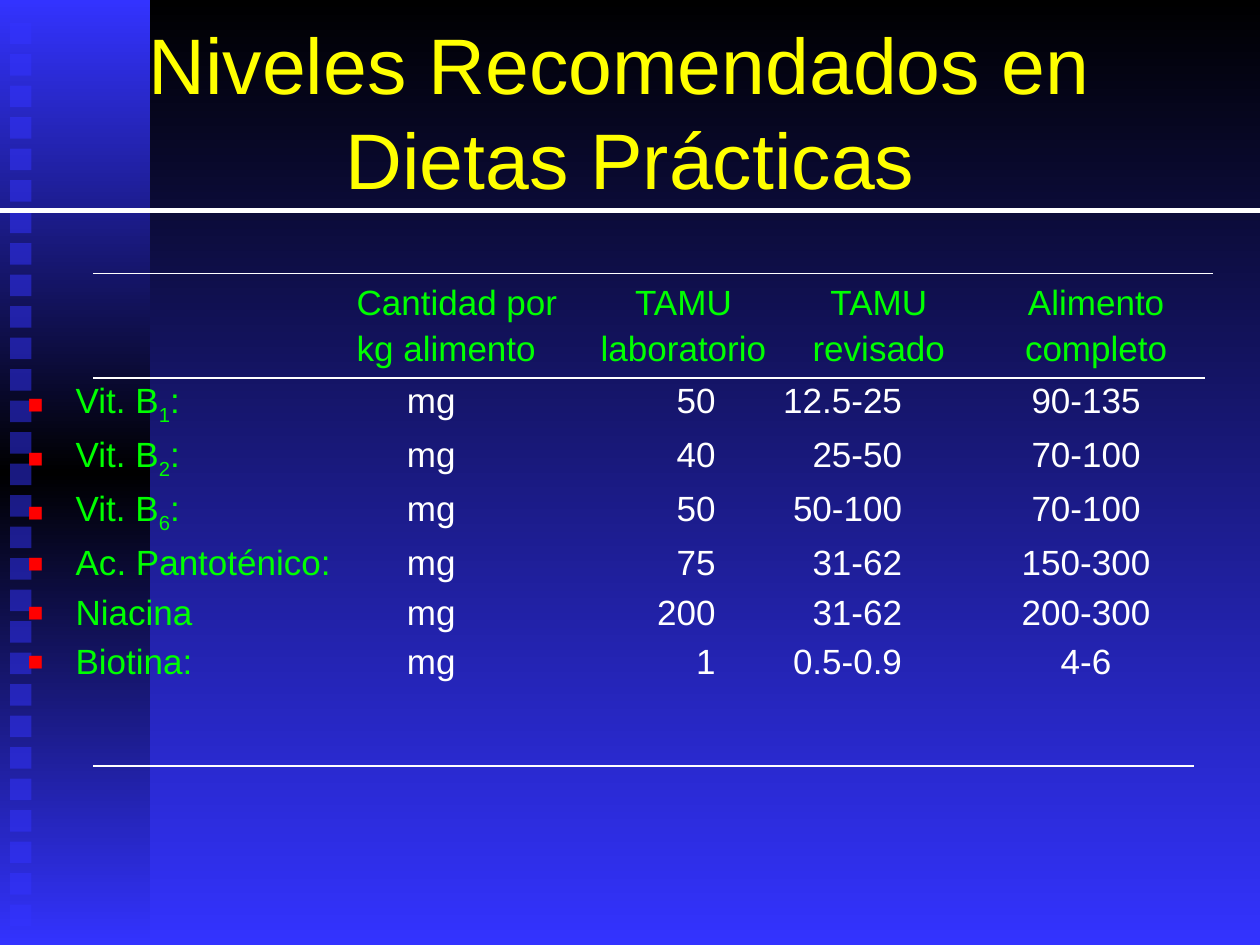
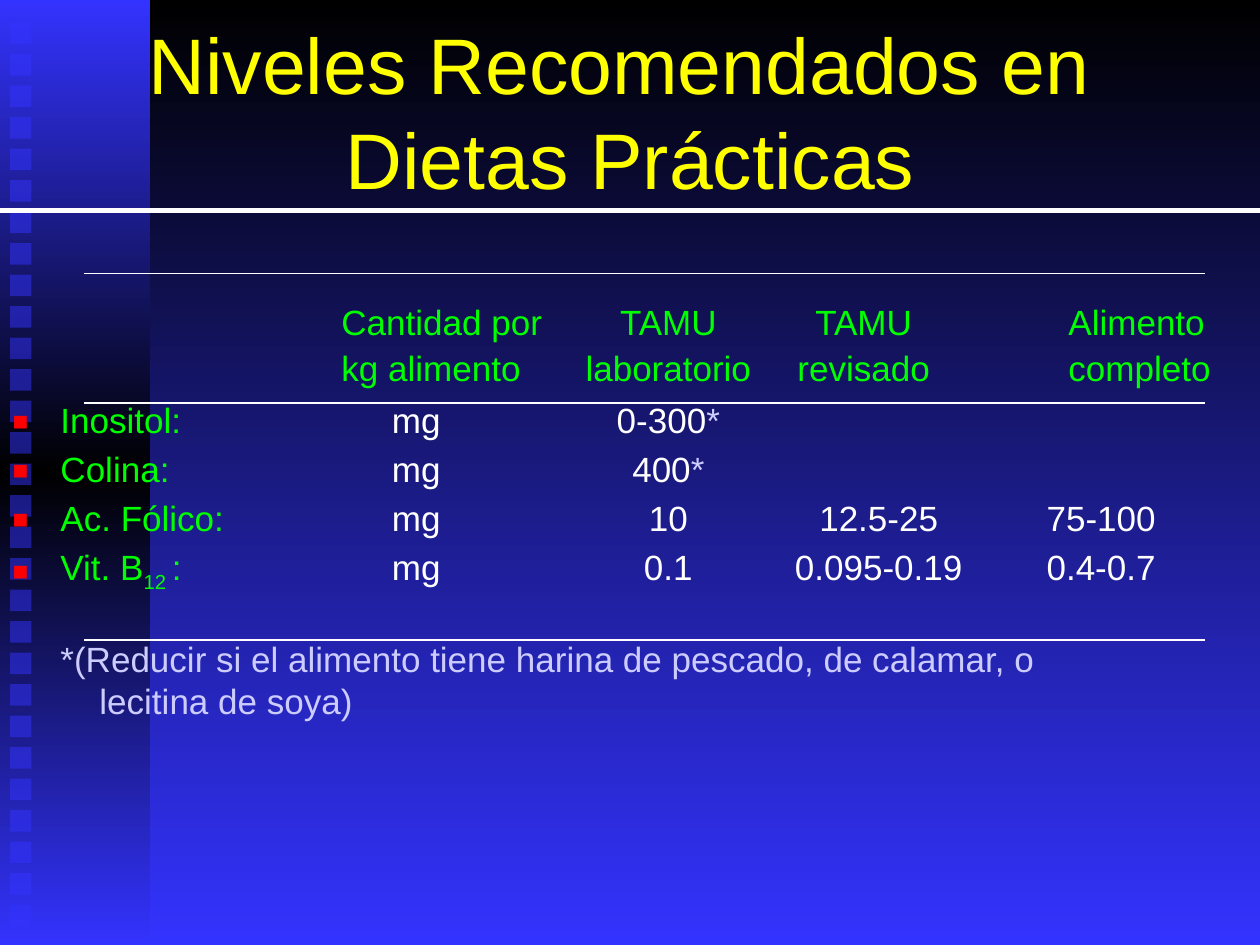
from copy import deepcopy
from dataclasses import dataclass
from typing import NamedTuple

from lxml import etree
from pptx import Presentation
from pptx.dml.color import RGBColor
from pptx.enum.shapes import MSO_CONNECTOR, MSO_SHAPE
from pptx.enum.text import MSO_ANCHOR, PP_ALIGN
from pptx.oxml.ns import qn
from pptx.util import Inches, Pt

LEFT, CENTER, RIGHT = PP_ALIGN.LEFT, PP_ALIGN.CENTER, PP_ALIGN.RIGHT
RECT, STRAIGHT = MSO_SHAPE.RECTANGLE, MSO_CONNECTOR.STRAIGHT
TOP, MIDDLE = MSO_ANCHOR.TOP, MSO_ANCHOR.MIDDLE

BLACK, BLUE, WHITE = "000000", "3333FF", "FFFFFF"
YELLOW, GREEN, RED, LILAC = "FFFF00", "00FF00", "FF0000", "CCCCFF"
FONT, TITLE_SIZE, BODY_SIZE = "Arial", 45, 20
TITLE = "Niveles Recomendados en \vDietas Prácticas"
NO_GRID_STYLE = "{2D5ABB26-0587-4C30-8999-92F81FD0307C}"
HANGING = 0.38
HEADER_HEIGHT, ROW_HEIGHT, SUBSCRIPT_ROW_HEIGHT = 0.78, 0.39, 0.43


class Column(NamedTuple):
    """One table column: width, then alignment and side insets of header and body."""
    width: float
    header: tuple[str, ...] = ()
    header_align: PP_ALIGN = CENTER
    header_left: float = 0
    align: PP_ALIGN = CENTER
    left: float = 0
    right: float = 0


class Row(NamedTuple):
    name: tuple[str, ...]  # text, subscript, text
    values: tuple[str, ...]
    height: float = ROW_HEIGHT


class Rule(NamedTuple):
    left: float
    right: float
    y: float
    weight: float = 1


@dataclass
class VitaminSlide:
    left: float
    top: float
    columns: list[Column]
    rows: list[Row]
    rules: list[Rule]
    footnote: str = ""


NAMES = Column(2.61, align=LEFT)
UNITS = Column(1.87, ("Cantidad por", "kg alimento"), LEFT, align=LEFT, left=0.4)
LAB = Column(1.45, ("TAMU", "laboratorio"))
REVISED = Column(1.65, ("TAMU", "revisado"))
COMPLETE = Column(1.8, ("Alimento", "completo"))

SLIDES = [
    VitaminSlide(
        left=0.22, top=2.21,
        columns=[NAMES, UNITS,
                 LAB._replace(align=RIGHT, right=0.47),
                 REVISED._replace(align=RIGHT, right=0.64),
                 COMPLETE._replace(right=0.16)],
        rows=[
            Row(("Vit. B", "1", ":"), ("mg", "50", "12.5-25", "90-135"), SUBSCRIPT_ROW_HEIGHT),
            Row(("Vit. B", "2", ":"), ("mg", "40", "25-50", "70-100"), SUBSCRIPT_ROW_HEIGHT),
            Row(("Vit. B", "6", ":"), ("mg", "50", "50-100", "70-100"), SUBSCRIPT_ROW_HEIGHT),
            Row(("Ac. Pantoténico:",), ("mg", "75", "31-62", "150-300")),
            Row(("Niacina",), ("mg", "200", "31-62", "200-300")),
            Row(("Biotina:",), ("mg", "1", "0.5-0.9", "4-6")),
        ],
        rules=[Rule(0.74, 9.56, 3), Rule(0.74, 9.63, 2.17), Rule(0.74, 9.48, 6.08)],
    ),
    VitaminSlide(
        left=0.1, top=2.37,
        columns=[NAMES, UNITS, LAB,
                 REVISED._replace(left=0.24),
                 COMPLETE._replace(width=2.12, header_align=LEFT, header_left=0.8)],
        rows=[
            Row(("Inositol:",), ("mg", "0-300*", "", "")),
            Row(("Colina:",), ("mg", "400*", "", "")),
            Row(("Ac. Fólico:",), ("mg", "10", "12.5-25", "75-100")),
            Row(("Vit. B", "12 ", ":"), ("mg", "0.1", "0.095-0.19", "0.4-0.7"),
                SUBSCRIPT_ROW_HEIGHT),
        ],
        rules=[Rule(0.67, 9.56, y) for y in (3.2, 2.17, 5.08)],
        footnote="*(Reducir si el alimento tiene harina de pescado, de calamar, o lecitina de soya)",
    ),
]


def rgb(color: str) -> RGBColor:
    return RGBColor.from_string(color)


def set_format(target, **values) -> None:
    for name, value in values.items():
        setattr(target, name, value)


def add_run(p, text: str, color: str, size: float = BODY_SIZE, baseline: int = 0) -> None:
    r = p.add_run()
    r.text = text
    set_format(r.font, name=FONT, size=Pt(size))
    r.font.color.rgb = rgb(color)
    if baseline:
        r.font._element.set("baseline", str(baseline * 1000))


def set_indent(p, hanging: float) -> None:
    pPr = p._p.get_or_add_pPr()
    pPr.set("marL", str(Inches(hanging)))
    pPr.set("indent", str(-Inches(hanging)))


def add_bullet(p) -> None:
    set_indent(p, HANGING)
    pPr = p._p.get_or_add_pPr()
    color = etree.SubElement(pPr, qn("a:buClr"))
    etree.SubElement(color, qn("a:srgbClr"), val=RED)
    etree.SubElement(pPr, qn("a:buSzPct"), val="75000")
    etree.SubElement(pPr, qn("a:buFont"), typeface=FONT)
    etree.SubElement(pPr, qn("a:buChar"), char="■")


def fill_gradient(fill, owner, colors: list[str]) -> None:
    """Fill from top to bottom with evenly spaced colours."""
    fill.gradient()
    fill.gradient_angle = 270
    stops = owner.find(".//" + qn("a:gsLst"))
    while len(stops) < len(colors):
        stops.append(deepcopy(stops[-1]))
    for i, (stop, color) in enumerate(zip(fill.gradient_stops, colors)):
        stop.position = i / (len(colors) - 1)
        stop.color.rgb = rgb(color)


def add_rect(s, left: float, top: float, width: float, height: float):
    sp = s.shapes.add_shape(RECT, Inches(left), Inches(top), Inches(width), Inches(height))
    sp.shadow.inherit = False
    sp.line.fill.background()
    return sp


def add_rule(s, rule: Rule) -> None:
    y = Inches(rule.y)
    line = s.shapes.add_connector(STRAIGHT, Inches(rule.left), y, Inches(rule.right), y)
    line.line.color.rgb = rgb(WHITE)
    line.line.width = Pt(rule.weight)
    etree.SubElement(line.element.spPr, qn("a:effectLst"))


def add_text_box(s, left: float, top: float, width: float, height: float):
    sp = s.shapes.add_textbox(Inches(left), Inches(top), Inches(width), Inches(height))
    sp.text_frame.word_wrap = True
    return sp.text_frame


def add_backdrop(s) -> None:
    """Background, left band with its column of squares."""
    fill_gradient(s.background.fill, s.element, [BLACK, BLUE])
    band = add_rect(s, 0, 0, 1.19, 7.5)
    fill_gradient(band.fill, band.element, [BLUE, BLACK, BLUE])
    for i in range(29):
        square = add_rect(s, 0.08, 0.18 + 0.25 * i, 0.17, 0.17)
        square.fill.solid()
        square.fill.fore_color.rgb = rgb(BLUE)
        color = square.element.spPr.find(".//" + qn("a:srgbClr"))
        etree.SubElement(color, qn("a:alpha"), val="50000")


def add_title(s) -> None:
    tf = add_text_box(s, 0, 0.25, 10, 1.25)
    tf.vertical_anchor = MIDDLE
    p = tf.paragraphs[0]
    p.alignment = CENTER
    for i, line in enumerate(TITLE.split("\v")):
        if i:
            p.add_line_break()
        add_run(p, line, YELLOW, TITLE_SIZE)


def clear_cell(cell, left: float, right: float) -> None:
    """No fill, no borders, text set close to the top."""
    cell.fill.background()
    set_format(cell, margin_left=Inches(left), margin_right=Inches(right),
               margin_top=Inches(0.04), margin_bottom=0, vertical_anchor=TOP)
    tcPr = cell._tc.get_or_add_tcPr()
    for i, side in enumerate(("lnL", "lnR", "lnT", "lnB")):
        border = etree.Element(qn(f"a:{side}"), w="0")
        etree.SubElement(border, qn("a:noFill"))
        tcPr.insert(i, border)


def write_header(cell, column: Column) -> None:
    clear_cell(cell, column.header_left, 0)
    tf = cell.text_frame
    for i, line in enumerate(column.header):
        p = tf.add_paragraph() if i else tf.paragraphs[0]
        p.alignment = column.header_align
        p.space_before = Pt(4 * i)
        add_run(p, line, GREEN)


def write_name(cell, name: tuple[str, ...]) -> None:
    clear_cell(cell, 0, 0)
    p = cell.text_frame.paragraphs[0]
    add_bullet(p)
    for i, part in enumerate(name):
        add_run(p, part, GREEN, baseline=-25 if i == 1 else 0)


def write_value(cell, column: Column, value: str) -> None:
    clear_cell(cell, column.left, column.right)
    p = cell.text_frame.paragraphs[0]
    p.alignment = column.align
    number, star, _ = value.partition("*")
    for text, color in ((number, WHITE), (star, LILAC)):
        if text:
            add_run(p, text, color)


def add_vitamin_table(s, spec_slide: VitaminSlide) -> None:
    columns, rows = spec_slide.columns, spec_slide.rows
    heights = [HEADER_HEIGHT] + [row.height for row in rows]
    frame = s.shapes.add_table(
        len(heights), len(columns), Inches(spec_slide.left), Inches(spec_slide.top),
        Inches(sum(c.width for c in columns)), Inches(sum(heights)))
    table = frame.table
    set_format(table, first_row=False, horz_banding=False)
    frame.element.find(".//" + qn("a:tableStyleId")).text = NO_GRID_STYLE
    for i, height in enumerate(heights):
        table.rows[i].height = Inches(height)
    for j, column in enumerate(columns):
        table.columns[j].width = Inches(column.width)
        write_header(table.cell(0, j), column)
    for i, row in enumerate(rows, start=1):
        write_name(table.cell(i, 0), row.name)
        for j, value in enumerate(row.values, start=1):
            write_value(table.cell(i, j), columns[j], value)


def add_footnote(s, text: str) -> None:
    tf = add_text_box(s, 0.48, 5.06, 8.1, 0.7)
    set_format(tf, margin_left=0, margin_right=0, margin_top=0, margin_bottom=0)
    set_indent(tf.paragraphs[0], 0.31)
    add_run(tf.paragraphs[0], text, LILAC)


def main() -> None:
    prs = Presentation()
    prs.slide_width, prs.slide_height = Inches(10), Inches(7.5)
    for content in SLIDES:
        s = prs.slides.add_slide(prs.slide_layouts[6])
        add_backdrop(s)
        add_title(s)
        add_vitamin_table(s, content)
        if content.footnote:
            add_footnote(s, content.footnote)
        for rule in content.rules + [Rule(0, 10, 1.67, 3)]:
            add_rule(s, rule)
    prs.save("out.pptx")


if __name__ == "__main__":
    main()
